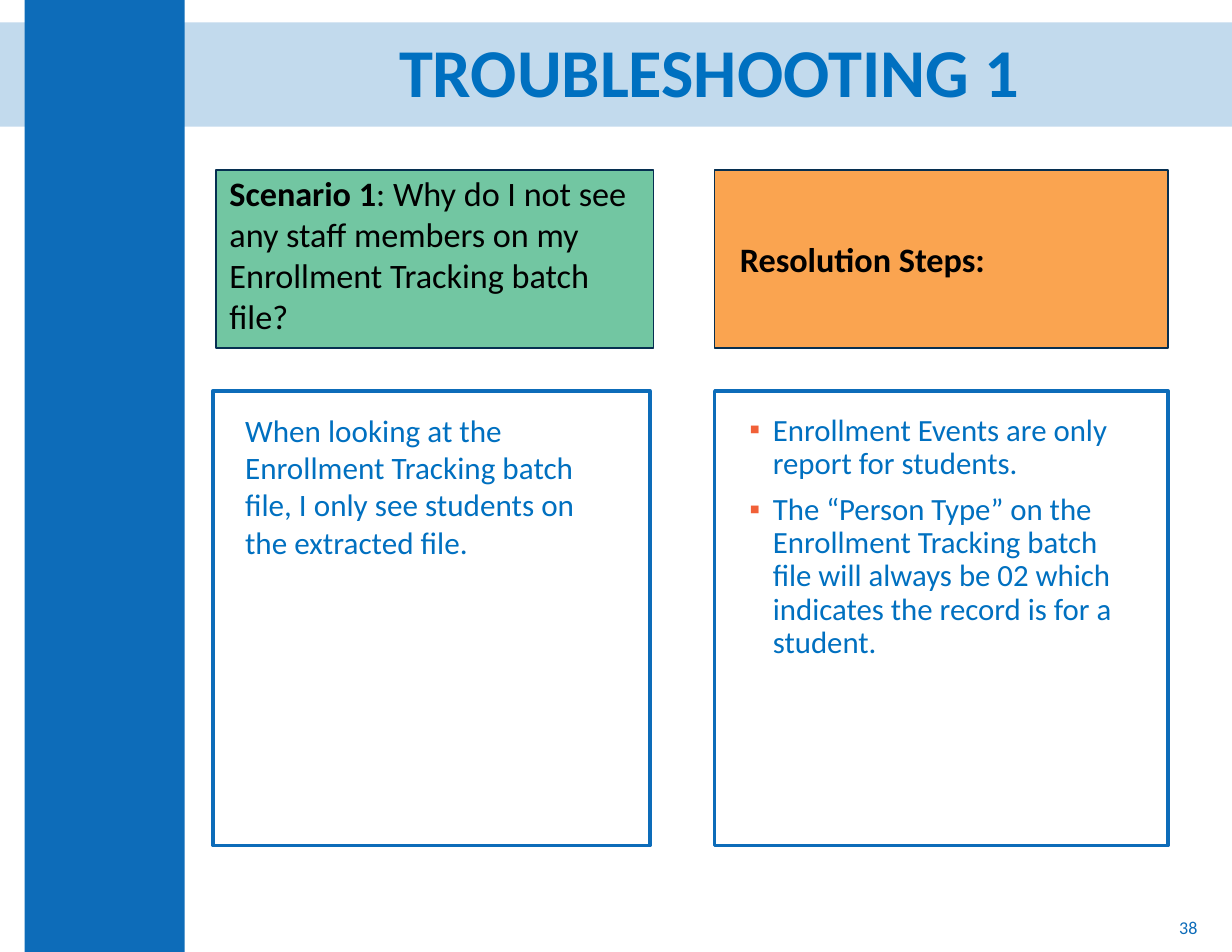
"""Build the "Troubleshooting 1" slide with its scenario and resolution columns."""
from dataclasses import dataclass
from typing import Optional

from lxml import etree
from pptx import Presentation
from pptx.dml.color import RGBColor
from pptx.enum import shapes, text
from pptx.oxml import ns
from pptx.util import Pt

FONT = "Calibri"
BRAND_BLUE = "0D6CB9"
TEXT_BLUE = "0070C0"
NAVY = "062F51"
BLACK = "000000"
BULLET_ORANGE = "F16038"


@dataclass(frozen=True)
class Box:
    left: float
    top: float
    width: float
    height: float

    def lengths(self):
        return Pt(self.left), Pt(self.top), Pt(self.width), Pt(self.height)


@dataclass(frozen=True)
class Panel:
    box: Box
    fill: Optional[str] = None
    line: Optional[str] = None
    line_width: float = 1


@dataclass(frozen=True)
class Label:
    box: Box
    paragraphs: tuple[tuple[tuple[str, bool], ...], ...]
    size: float
    color: str
    align: text.PP_ALIGN = text.PP_ALIGN.LEFT
    anchor: text.MSO_ANCHOR = text.MSO_ANCHOR.TOP
    margins: tuple[float, float] = (7.2, 3.6)
    line_spacing: float = 1
    space_before: float = 0
    bullet: Optional[str] = None


BAND = Panel(Box(0, 14.4, 792, 67), fill="C2DAED")
SIDEBAR = Panel(Box(15.8, 0, 103, 612), fill=BRAND_BLUE)
PANELS = (
    BAND,
    SIDEBAR,
    Panel(Box(139, 109.4, 281, 114.5), "72C6A2", NAVY),
    Panel(Box(459.4, 109.4, 291.6, 114.5), "FAA450", NAVY),
    Panel(Box(136.8, 251.3, 281, 292.3), None, BRAND_BLUE, 2.25),
    Panel(Box(459.4, 251.3, 291.6, 292.3), None, BRAND_BLUE, 2.25),
)

TITLE = Label(
    Box(143.3, 15.1, 625.7, 67), ((("TROUBLESHOOTING 1", True),),), 44, TEXT_BLUE,
    text.PP_ALIGN.CENTER, text.MSO_ANCHOR.MIDDLE, line_spacing=0.9,
)
LABELS = (
    Label(
        Box(140.4, 107.3, 277.2, 113.8),
        ((
            ("Scenario 1", True),
            (": Why do I not see any staff members on my Enrollment Tracking batch file?", False),
        ),),
        22, BLACK,
    ),
    Label(
        Box(459.4, 109.4, 291.6, 114.5), ((("Resolution Steps:", True),),), 22, BLACK,
        anchor=text.MSO_ANCHOR.MIDDLE, margins=(16.2, 3.6),
    ),
    Label(
        Box(150.5, 260.6, 254.2, 126),
        ((("When looking at the Enrollment Tracking batch file, "
           "I only see students on the extracted file.", False),),),
        20, TEXT_BLUE,
    ),
    Label(
        Box(475.9, 263.5, 260.6, 258.5),
        (
            (("Enrollment Events are only report for students.", False),),
            (("The “Person Type” on the Enrollment Tracking batch file will always be 02 "
              "which indicates the record is for a student.", False),),
        ),
        19.8, TEXT_BLUE, margins=(5.8, 2.9), line_spacing=0.9, space_before=8.2, bullet="▪",
    ),
    Label(
        Box(598.3, 579.6, 178.6, 32.4), ((("38", False),),), 11.6, BRAND_BLUE,
        text.PP_ALIGN.RIGHT, text.MSO_ANCHOR.MIDDLE,
    ),
)


def rgb(value: str) -> RGBColor:
    return RGBColor.from_string(value)


def add_panel(slide, panel: Panel) -> None:
    shape = slide.shapes.add_shape(shapes.MSO_SHAPE.RECTANGLE, *panel.box.lengths())
    shape.shadow.inherit = False
    if panel.fill:
        shape.fill.solid()
        shape.fill.fore_color.rgb = rgb(panel.fill)
    else:
        shape.fill.background()
    if panel.line:
        shape.line.color.rgb = rgb(panel.line)
        shape.line.width = Pt(panel.line_width)
    else:
        shape.line.fill.background()


def add_bullet(paragraph, character: str, indent: float = 15.1) -> None:
    properties = paragraph._p.get_or_add_pPr()
    properties.set("marL", str(Pt(indent)))
    properties.set("indent", str(-Pt(indent)))
    color = etree.SubElement(properties, ns.qn("a:buClr"))
    etree.SubElement(color, ns.qn("a:srgbClr"), val=BULLET_ORANGE)
    etree.SubElement(properties, ns.qn("a:buFont"), typeface="Arial")
    etree.SubElement(properties, ns.qn("a:buChar"), char=character)


def write_label(shape, label: Label) -> None:
    frame = shape.text_frame
    frame.word_wrap = True
    frame.auto_size = text.MSO_AUTO_SIZE.NONE
    frame.vertical_anchor = label.anchor
    frame.margin_left = frame.margin_right = Pt(label.margins[0])
    frame.margin_top = frame.margin_bottom = Pt(label.margins[1])
    for index, runs in enumerate(label.paragraphs):
        paragraph = frame.add_paragraph() if index else frame.paragraphs[0]
        if label.bullet:
            add_bullet(paragraph, label.bullet)
        paragraph.alignment = label.align
        paragraph.line_spacing = label.line_spacing
        paragraph.space_before = Pt(label.space_before if index else 0)
        paragraph.font.name = FONT
        paragraph.font.size = Pt(label.size)
        paragraph.font.color.rgb = rgb(label.color)
        for words, bold in runs:
            run = paragraph.add_run()
            run.text = words
            run.font.bold = bold


def place_title(slide, label: Label) -> None:
    title = slide.shapes.title
    title.left, title.top, title.width, title.height = label.box.lengths()
    write_label(title, label)
    slide.shapes._spTree.append(title._element)


def main() -> None:
    presentation = Presentation()
    presentation.slide_width, presentation.slide_height = Pt(792), Pt(612)
    slide = presentation.slides.add_slide(presentation.slide_layouts[5])
    for panel in PANELS:
        add_panel(slide, panel)
    place_title(slide, TITLE)
    for label in LABELS:
        write_label(slide.shapes.add_textbox(*label.box.lengths()), label)
    presentation.save("out.pptx")


if __name__ == "__main__":
    main()
